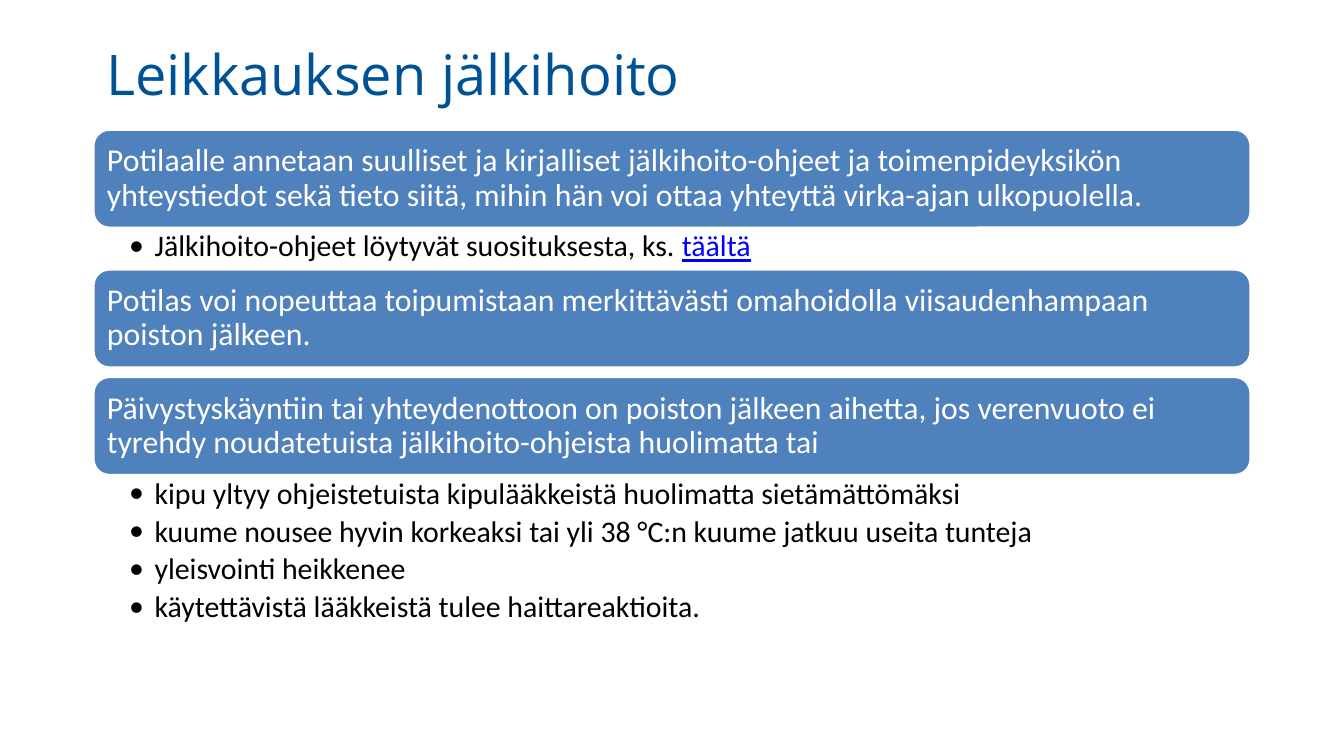
from lxml import etree
from pptx import Presentation
from pptx.dml.color import RGBColor
from pptx.enum.shapes import MSO_SHAPE
from pptx.enum.text import MSO_ANCHOR, PP_ALIGN
from pptx.oxml.ns import qn
from pptx.util import Inches, Pt

ROUNDED = MSO_SHAPE.ROUNDED_RECTANGLE
MIDDLE = MSO_ANCHOR.MIDDLE
LEFT = PP_ALIGN.LEFT

COLORS = {"title": "005296", "bar": "4F81BD", "white": "FFFFFF",
          "text": "000000", "link": "0000FF"}
TITLE_FONT, BODY_FONT = "Open Sans", "Calibri"

SLIDE_WIDTH = 10
SLIDE_HEIGHT = SLIDE_WIDTH * 9 / 16
MARGIN = 0.69
CONTENT_WIDTH = SLIDE_WIDTH - 2 * MARGIN
BAR_HEIGHT, BAR_GAP = 0.74, 0.06
LINE_SPACING = 0.9

LINK_WORD = "täältä"
# Each section: bar text, bullets below it, height of the space below the bar
SECTIONS = [
    ("Potilaalle annetaan suulliset ja kirjalliset jälkihoito-ohjeet ja "
     "toimenpideyksikön yhteystiedot sekä tieto siitä, mihin hän voi ottaa "
     "yhteyttä virka-ajan ulkopuolella.",
     ["Jälkihoito-ohjeet löytyvät suosituksesta, ks. " + LINK_WORD], 0.3),
    ("Potilas voi nopeuttaa toipumistaan merkittävästi omahoidolla "
     "viisaudenhampaan poiston jälkeen.", [], BAR_GAP),
    ("Päivystyskäyntiin tai yhteydenottoon on poiston jälkeen aihetta, jos "
     "verenvuoto ei tyrehdy noudatetuista jälkihoito-ohjeista huolimatta tai",
     ["kipu yltyy ohjeistetuista kipulääkkeistä huolimatta sietämättömäksi",
      "kuume nousee hyvin korkeaksi tai yli 38 °C:n kuume jatkuu useita tunteja",
      "yleisvointi heikkenee",
      "käytettävistä lääkkeistä tulee haittareaktioita."], 1.19),
]


def color(name):
    return RGBColor.from_string(COLORS[name])


def style_font(font, name, size, color_name):
    font.name, font.size = name, Pt(size)
    font.color.rgb = color(color_name)


def set_insets(frame, left, top, right, bottom):
    frame.word_wrap = True
    frame.margin_left, frame.margin_top = Inches(left), Inches(top)
    frame.margin_right, frame.margin_bottom = Inches(right), Inches(bottom)


def add_bullet(paragraph, indent):
    properties = paragraph._p.get_or_add_pPr()
    properties.set("lvl", "1")
    properties.set("marL", str(Inches(indent)))
    properties.set("indent", str(-Inches(indent)))
    etree.SubElement(properties, qn("a:buFont")).set("typeface", BODY_FONT)
    etree.SubElement(properties, qn("a:buChar")).set("char", "•")


def place_title(slide, left, top, width, height):
    title = slide.shapes.title
    title.left, title.top = Inches(left), Inches(top)
    title.width, title.height = Inches(width), Inches(height)
    frame = title.text_frame
    frame.text = "Leikkauksen jälkihoito"
    set_insets(frame, 0.1, 0.05, 0.1, 0.05)
    frame.vertical_anchor = MIDDLE
    paragraph = frame.paragraphs[0]
    paragraph.alignment = LEFT
    style_font(paragraph.font, TITLE_FONT, 30, "title")


def add_bar(slide, text, left, top, width, height):
    bar = slide.shapes.add_shape(
        ROUNDED, Inches(left), Inches(top), Inches(width), Inches(height))
    bar.shadow.inherit = False
    bar.fill.solid()
    bar.fill.fore_color.rgb = color("bar")
    bar.line.color.rgb = color("white")
    bar.line.width = Pt(2)
    frame = bar.text_frame
    frame.text = text
    set_insets(frame, 0.07, 0.07, 0.07, 0.07)
    frame.vertical_anchor = MIDDLE
    paragraph = frame.paragraphs[0]
    paragraph.alignment = LEFT
    paragraph.line_spacing = LINE_SPACING
    style_font(paragraph.font, BODY_FONT, 17, "white")


def add_bullet_list(slide, items, left, top, width, height):
    box = slide.shapes.add_textbox(
        Inches(left), Inches(top), Inches(width), Inches(height))
    frame = box.text_frame
    set_insets(frame, 0.27, 0.02, 0.12, 0.02)
    for index, item in enumerate(items):
        paragraph = frame.add_paragraph() if index else frame.paragraphs[0]
        add_bullet(paragraph, 0.19)
        paragraph.line_spacing = LINE_SPACING
        paragraph.space_after = Pt(3)
        style_font(paragraph.font, BODY_FONT, 16, "text")
        plain, link, _ = item.partition(LINK_WORD)
        paragraph.add_run().text = plain
        if link:
            run = paragraph.add_run()
            run.text = link
            run.font.underline = True
            run.font.color.rgb = color("link")


def add_sections(slide, left, top, width):
    """Stack the bars, each followed by its bullets or by a plain gap."""
    for text, items, space_below in SECTIONS:
        add_bar(slide, text, left, top, width, BAR_HEIGHT)
        top += BAR_HEIGHT
        if items:
            add_bullet_list(slide, items, left, top, width, space_below)
        top += space_below


def main():
    presentation = Presentation()
    presentation.slide_width = Inches(SLIDE_WIDTH)
    presentation.slide_height = Inches(SLIDE_HEIGHT)
    title_only = presentation.slide_layouts[5]
    slide = presentation.slides.add_slide(title_only)
    place_title(slide, MARGIN, 0.24, CONTENT_WIDTH, 0.61)
    add_sections(slide, MARGIN, 0.96, CONTENT_WIDTH)
    presentation.save("out.pptx")


if __name__ == "__main__":
    main()
